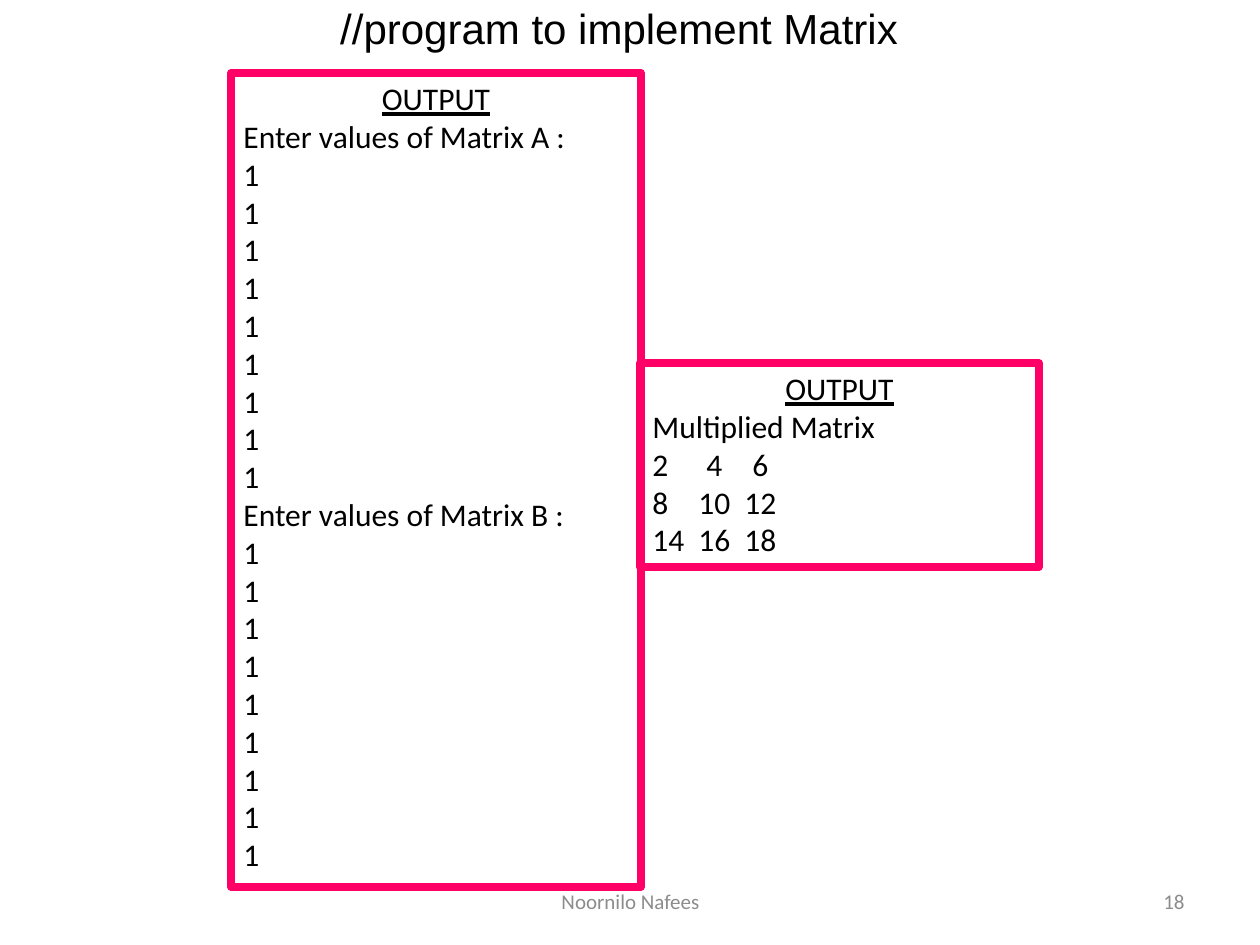
from lxml.etree import SubElement
from pptx import Presentation
from pptx.dml.color import RGBColor
from pptx.enum.shapes import MSO_SHAPE
from pptx.enum.text import MSO_ANCHOR as Anchor, PP_ALIGN as Align
from pptx.oxml.ns import qn
from pptx.util import Emu, Pt

EMU_PER_PX = 914400 // 126
BLACK, GRAY, PINK = "000000", "8C8C8C", "FF0066"
COLUMN_CENTERS = (62, 108)  # second and third matrix columns


def px(length):
    return Emu(length * EMU_PER_PX)


def color(hex_string):
    return RGBColor.from_string(hex_string)


def place(shape, box):
    shape.left, shape.top, shape.width, shape.height = map(px, box)


def write(paragraph, text, size=18, font="Calibri", fill=BLACK,
          align=Align.LEFT, underline=False):
    paragraph.alignment = align
    run = paragraph.add_run()
    run.text = text
    run.font.size = Pt(size)
    run.font.name = font
    run.font.color.rgb = color(fill)
    run.font.underline = underline


def add_column_tabs(paragraph):
    """Center the matrix columns on tab stops."""
    tabs = SubElement(paragraph._p.get_or_add_pPr(), qn("a:tabLst"))
    for center in COLUMN_CENTERS:
        SubElement(tabs, qn("a:tab"), pos=str(px(center)), algn="ctr")


def add_title(slide, box, text):
    title = slide.shapes.title
    place(title, box)
    title.text_frame.vertical_anchor = Anchor.MIDDLE
    write(title.text_frame.paragraphs[0], text, size=24, font="Arial",
          align=Align.CENTER)


def add_output_panel(slide, box, lines):
    panel = slide.shapes.add_shape(MSO_SHAPE.RECTANGLE, *map(px, box))
    panel.shadow.inherit = False
    panel.fill.background()
    panel.line.color.rgb = color(PINK)
    panel.line.width = Pt(4.5)
    frame = panel.text_frame
    frame.word_wrap = True
    frame.vertical_anchor = Anchor.TOP
    write(frame.paragraphs[0], "OUTPUT", align=Align.CENTER, underline=True)
    for line in lines:
        paragraph = frame.add_paragraph()
        write(paragraph, line)
        if "\t" in line:
            add_column_tabs(paragraph)


def add_footer_text(slide, box, text, align):
    frame = slide.shapes.add_textbox(*map(px, box)).text_frame
    frame.word_wrap = True
    frame.vertical_anchor = Anchor.MIDDLE
    write(frame.paragraphs[0], text, size=12, fill=GRAY, align=align)


def main():
    presentation = Presentation()
    presentation.slide_width, presentation.slide_height = px(1260), px(945)
    slide = presentation.slides.add_slide(presentation.slide_layouts[5])

    add_title(slide, (42, -21, 1166, 98), "//program to implement Matrix ")

    # Entered values of both 3 x 3 matrices
    entries = [line for name in "AB"
               for line in [f"Enter values of Matrix {name} :"] + ["1"] * 9]
    add_output_panel(slide, (231, 73, 410, 814), entries)

    # Result, one tabbed line for each matrix row
    rows = [(2, 4, 6), (8, 10, 12), (14, 16, 18)]
    result = ["\t".join(map(str, row)) for row in rows]
    add_output_panel(slide, (640, 363, 399, 204), ["Multiplied Matrix"] + result)

    # Footer
    add_footer_text(slide, (903, 876, 294, 50), "18", Align.RIGHT)
    add_footer_text(slide, (431, 876, 399, 50), "Noornilo Nafees", Align.CENTER)

    presentation.save("out.pptx")


if __name__ == "__main__":
    main()
